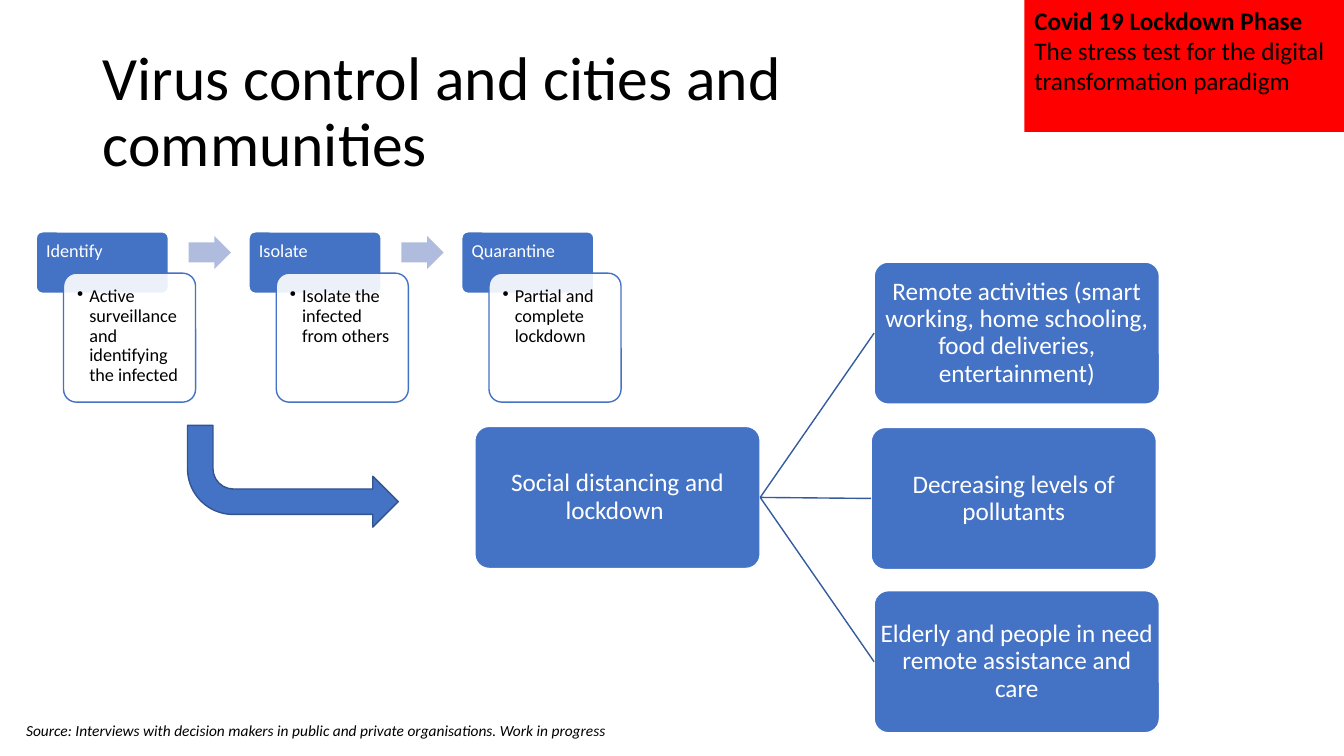
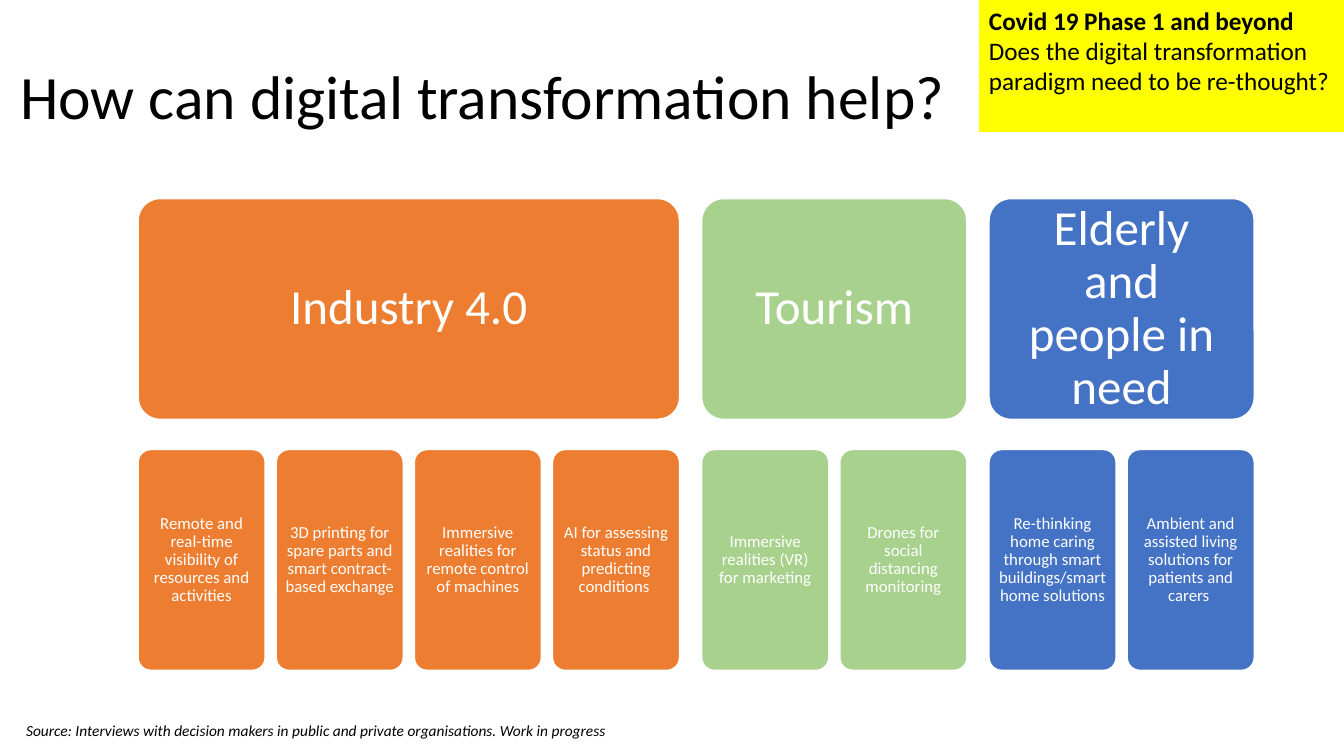
from dataclasses import dataclass
from typing import Optional

from lxml import etree
from pptx import Presentation
from pptx.dml.color import RGBColor
from pptx.enum.shapes import MSO_CONNECTOR, MSO_SHAPE
from pptx.enum.text import MSO_ANCHOR, MSO_AUTO_SIZE, PP_ALIGN
from pptx.oxml.ns import qn
from pptx.shapes.autoshape import Shape
from pptx.slide import Slide
from pptx.text.text import TextFrame
from pptx.util import Inches, Pt

FONT = "Calibri"
BLACK = RGBColor(0x00, 0x00, 0x00)
WHITE = RGBColor(0xFF, 0xFF, 0xFF)
RED = RGBColor(0xFF, 0x00, 0x00)
YELLOW = RGBColor(0xFF, 0xFF, 0x00)
BLUE = RGBColor(0x44, 0x72, 0xC4)
ORANGE = RGBColor(0xED, 0x7D, 0x31)
GREEN = RGBColor(0xA9, 0xD1, 0x8E)
PALE_BLUE = RGBColor(0xB0, 0xBC, 0xDE)
LINK_BLUE = RGBColor(0x36, 0x5B, 0x9D)
EDGE_BLUE = RGBColor(0x32, 0x54, 0x91)

RECT, ROUND_RECT = MSO_SHAPE.RECTANGLE, MSO_SHAPE.ROUNDED_RECTANGLE
RIGHT_ARROW, BENT_ARROW = MSO_SHAPE.RIGHT_ARROW, MSO_SHAPE.BENT_ARROW
TOP, MIDDLE = MSO_ANCHOR.TOP, MSO_ANCHOR.MIDDLE
LEFT, CENTER = PP_ALIGN.LEFT, PP_ALIGN.CENTER
LEFT_SITE, RIGHT_SITE = 1, 3
TITLE_ONLY = 5

SLIDE_W, SLIDE_H = 13.33, 7.5
TITLE_W, TITLE_H = 11.5, 1.45
BANNER_H = 1.31
SOURCE = ("Source: Interviews with decision makers in public and private "
          "organisations. Work in progress")


@dataclass(frozen=True)
class Box:
    x: float
    y: float
    w: float
    h: float


@dataclass(frozen=True)
class Banner:
    left: float
    fill: RGBColor
    lines: tuple[str, ...]


@dataclass(frozen=True)
class Step:
    name: str
    detail: str


@dataclass(frozen=True)
class Sector:
    name: str
    fill: RGBColor
    ideas: tuple[str, ...]


STEP_X, STEP_Y, STEP_W, STEP_PITCH = 0.36, 2.3, 1.31, 2.11
STEPS = (
    Step("Identify", "Active surveillance and identifying the infected"),
    Step("Isolate", "Isolate the infected from others"),
    Step("Quarantine", "Partial and complete lockdown"),
)

NODE_W, NODE_H = 2.83, 1.41
CAUSE = "Social distancing and lockdown "
EFFECTS = (
    (8.67, 2.6, "Remote activities (smart working, home schooling, "
                "food deliveries, entertainment)"),
    (8.64, 4.24, "Decreasing levels of pollutants"),
    (8.67, 5.86, "Elderly and people in need remote assistance and care"),
)

GRID_X, GRID_GAP = 1.37, 0.11
SECTOR_Y, IDEA_Y, TILE_W, TILE_H = 1.97, 4.46, 1.26, 2.19
SECTORS = (
    Sector("Industry 4.0", ORANGE, (
        "Remote and real-time visibility of resources and activities",
        "3D printing for spare parts and smart contract-based exchange",
        "Immersive realities for remote control of machines",
        "AI for assessing status and predicting conditions ",
    )),
    Sector("Tourism", GREEN, (
        "Immersive realities (VR) for marketing",
        "Drones for social distancing monitoring",
    )),
    Sector("Elderly and people in need", BLUE, (
        "Re-thinking home caring through smart buildings/smart home solutions",
        "Ambient and assisted living solutions for patients and carers ",
    )),
)


def add_shape(s: Slide, kind: MSO_SHAPE, box: Box, fill: RGBColor,
              line: Optional[RGBColor] = None,
              adjust: tuple[float, ...] = ()) -> Shape:
    sp = s.shapes.add_shape(kind, Inches(box.x), Inches(box.y),
                            Inches(box.w), Inches(box.h))
    sp.shadow.inherit = False
    sp.fill.solid()
    sp.fill.fore_color.rgb = fill
    if line is None:
        sp.line.fill.background()
    else:
        sp.line.color.rgb = line
        sp.line.width = Pt(1)
    for i, value in enumerate(adjust):
        sp.adjustments[i] = value
    return sp


def write(tf: TextFrame, lines: tuple[str, ...], size: float,
          color: RGBColor = BLACK, align: PP_ALIGN = LEFT,
          spacing: float = 1.0, bullet: bool = False) -> None:
    for i, text in enumerate(lines):
        p = tf.paragraphs[0] if i == 0 else tf.add_paragraph()
        p.text = text
        p.alignment = align
        p.line_spacing = spacing
        if bullet:
            add_bullet(p._p.get_or_add_pPr())
        p.font.name = FONT
        p.font.size = Pt(size)
        p.font.color.rgb = color


def add_bullet(p_pr: etree._Element) -> None:
    indent = Inches(0.12)
    p_pr.set("marL", str(indent))
    p_pr.set("indent", str(-indent))
    etree.SubElement(p_pr, qn("a:buChar")).set("char", "•")


def add_card(s: Slide, box: Box, text: str, size: float, fill: RGBColor,
             line: RGBColor = WHITE, color: RGBColor = WHITE,
             inset: float = 0.01, anchor: MSO_ANCHOR = MIDDLE,
             align: PP_ALIGN = CENTER, bullet: bool = False) -> Shape:
    """Draw a rounded rectangle that holds one paragraph."""
    sp = add_shape(s, ROUND_RECT, box, fill, line, (0.1,))
    tf = sp.text_frame
    tf.word_wrap = True
    tf.vertical_anchor = anchor
    tf.margin_left = tf.margin_right = Inches(inset)
    tf.margin_top = tf.margin_bottom = Inches(inset)
    write(tf, (text,), size, color, align, 0.9, bullet)
    return sp


def add_link(s: Slide, start: Shape, end: Shape) -> None:
    link = s.shapes.add_connector(MSO_CONNECTOR.STRAIGHT, 0, 0, 0, 0)
    link.begin_connect(start, RIGHT_SITE)
    link.end_connect(end, LEFT_SITE)
    link.line.color.rgb = LINK_BLUE
    link.line.width = Pt(1)
    etree.SubElement(link._element.spPr, qn("a:effectLst"))


def add_frame(prs: Presentation, title: str, x: float, y: float,
              banner: Banner) -> Slide:
    """Add a slide with its title, corner banner and source line."""
    s = prs.slides.add_slide(prs.slide_layouts[TITLE_ONLY])
    sp = s.shapes.title
    sp.left, sp.top = Inches(x), Inches(y)
    sp.width, sp.height = Inches(TITLE_W), Inches(TITLE_H)
    tf = sp.text_frame
    tf.auto_size = MSO_AUTO_SIZE.NONE
    tf.vertical_anchor = MIDDLE
    write(tf, (title,), 44, spacing=0.9)

    box = Box(banner.left, 0, SLIDE_W - banner.left, BANNER_H)
    tf = add_shape(s, RECT, box, banner.fill).text_frame
    tf.word_wrap = False
    tf.vertical_anchor = TOP
    write(tf, banner.lines, 18)
    tf.paragraphs[0].font.bold = True

    tf = s.shapes.add_textbox(Inches(0.16), Inches(7.1),
                              Inches(5.99), Inches(0.29)).text_frame
    tf.word_wrap = False
    write(tf, (SOURCE,), 11)
    tf.paragraphs[0].font.italic = True
    return s


def add_steps(s: Slide) -> None:
    for i, step in enumerate(STEPS):
        x = STEP_X + i * STEP_PITCH
        add_card(s, Box(x, STEP_Y, STEP_W, 0.61), step.name, 13, BLUE,
                 inset=0.08, anchor=TOP, align=LEFT)
        sp = add_card(s, Box(x + 0.27, STEP_Y + 0.41, STEP_W, 1.28),
                      step.detail, 13, WHITE, BLUE, BLACK,
                      inset=0.1, anchor=TOP, align=LEFT, bullet=True)
        rgb = sp._element.spPr.find(qn("a:solidFill")).find(qn("a:srgbClr"))
        etree.SubElement(rgb, qn("a:alpha")).set("val", "90000")
        if i < len(STEPS) - 1:
            add_shape(s, RIGHT_ARROW, Box(x + 1.51, STEP_Y + 0.04, 0.42, 0.33),
                      PALE_BLUE, adjust=(0.6, 0.5))


def add_effects(s: Slide) -> None:
    cause = add_card(s, Box(4.71, 4.23, NODE_W, NODE_H), CAUSE, 18, BLUE)
    for x, y, text in EFFECTS:
        effect = add_card(s, Box(x, y, NODE_W, NODE_H), text, 18, BLUE)
        add_link(s, cause, effect)


def build_virus_control(prs: Presentation) -> None:
    s = add_frame(prs, "Virus control and cities and \vcommunities", 0.92, 0.4,
                  Banner(10.16, RED, ("Covid 19 Lockdown Phase",
                                      "The stress test for the digital",
                                      "transformation paradigm")))
    add_steps(s)
    add_effects(s)
    turn = add_shape(s, BENT_ARROW, Box(1.86, 4.22, 2.09, 1.01), BLUE,
                     EDGE_BLUE, (0.25, 0.25, 0.25, 0.45))
    turn._element.spPr.get_or_add_xfrm().set("flipV", "1")


def build_digital_help(prs: Presentation) -> None:
    s = add_frame(prs, "How can digital transformation help?", 0.1, 0.26,
                  Banner(9.71, YELLOW, ("Covid 19 Phase 1 and beyond",
                                        "Does the digital transformation",
                                        "paradigm need to be re-thought?")))
    pitch = TILE_W + GRID_GAP
    x = GRID_X
    for sector in SECTORS:
        width = len(sector.ideas) * pitch - GRID_GAP
        add_card(s, Box(x, SECTOR_Y, width, TILE_H), sector.name, 35,
                 sector.fill, inset=0.15)
        for i, idea in enumerate(sector.ideas):
            add_card(s, Box(x + i * pitch, IDEA_Y, TILE_W, TILE_H), idea, 12,
                     sector.fill, inset=0.05)
        x += width + 2 * GRID_GAP


def main() -> None:
    prs = Presentation()
    prs.slide_width, prs.slide_height = Inches(SLIDE_W), Inches(SLIDE_H)
    build_virus_control(prs)
    build_digital_help(prs)
    prs.save("out.pptx")


if __name__ == "__main__":
    main()
